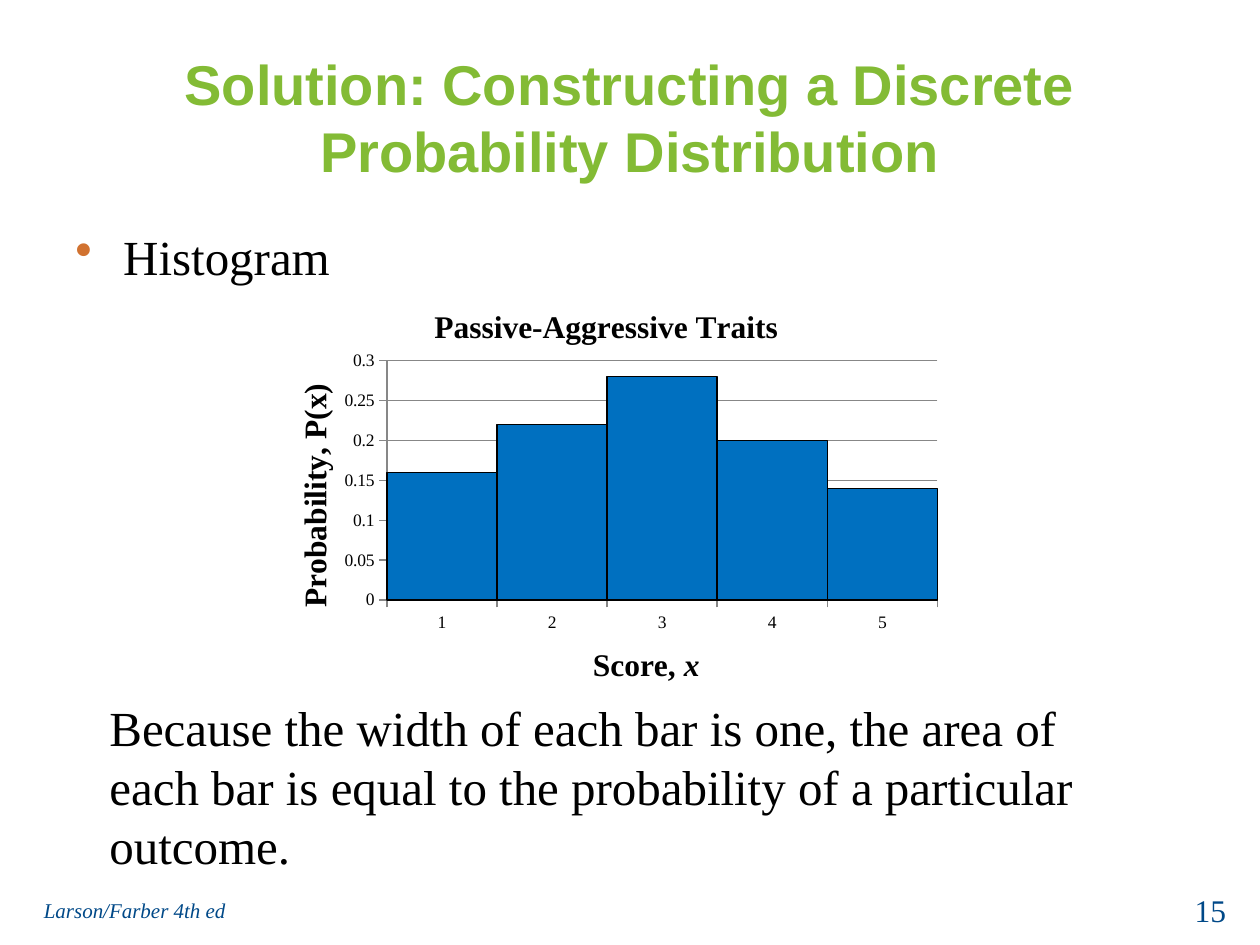
from lxml.etree import SubElement
from pptx import Presentation
from pptx.chart.data import CategoryChartData as Data
from pptx.dml.color import RGBColor
from pptx.enum.chart import XL_CHART_TYPE as Kind, XL_TICK_MARK as Tick
from pptx.enum.text import MSO_ANCHOR as Anchor, PP_ALIGN as Align
from pptx.oxml.ns import qn
from pptx.util import Inches, Pt

COLS, ROWS = 100, 75
SERIF, SANS = "Times New Roman", "Arial"
BLACK, GREEN, NAVY = "000000", "83BB35", "004988"
RUST, BLUE, GRAY = "D17230", "0070C0", "878787"


def rgb(code):
    return RGBColor.from_string(code)


def pin(node, index, **share):
    """Fix a chart part at shares of the chart's size."""
    for old in node.findall(qn("c:layout")):
        node.remove(old)
    layout = SubElement(node, qn("c:layout"))
    node.insert(index, layout)
    spot = SubElement(layout, qn("c:manualLayout"))
    if "w" in share:
        SubElement(spot, qn("c:layoutTarget")).set("val", "inner")
    for name in ("xMode", "yMode"):
        SubElement(spot, qn("c:" + name)).set("val", "edge")
    for name, value in share.items():
        SubElement(spot, qn("c:" + name)).set("val", str(value))


class Deck:
    """Places elements on a grid of COLS by ROWS cells."""

    def __init__(self):
        self.prs = Presentation()
        self.prs.slide_width, self.prs.slide_height = Inches(10), Inches(7.5)
        self.slide = self.prs.slides.add_slide(self.prs.slide_layouts[6])

    def area(self, x, y, w, h):
        wide, high = self.prs.slide_width / COLS, self.prs.slide_height / ROWS
        return [int(n) for n in (x * wide, y * high, w * wide, h * high)]

    def style(self, font, size, color=BLACK, face=SERIF, bold=False, italic=False):
        font.name, font.size = face, Pt(size)
        font.bold, font.italic = bold, italic
        font.color.rgb = rgb(color)

    def text(self, words, area, size, align=Align.LEFT, anchor=Anchor.TOP, **look):
        frame = self.slide.shapes.add_textbox(*self.area(*area)).text_frame
        frame.word_wrap, frame.vertical_anchor = True, anchor
        para = frame.paragraphs[0]
        para.text, para.alignment = words, align
        self.style(para.font, size, **look)
        return para

    def bullet(self, words, area, size):
        para = self.text(words, area, size)
        para.space_before = Pt(size * 0.2)
        props = para._p.get_or_add_pPr()
        props.set("marL", str(Inches(0.38)))
        props.set("indent", str(-Inches(0.38)))
        tint = SubElement(props, qn("a:buClr"))
        SubElement(tint, qn("a:srgbClr")).set("val", RUST)
        mark = SubElement(props, qn("a:buChar"))
        mark.set("char", "•")
        base = props.find(qn("a:defRPr"))
        if base is not None:
            props.append(base)

    def title(self, owner, runs, x, y):
        """Title a chart or axis; runs are (words, italic) pairs."""
        owner.has_title = True
        title = getattr(owner, "chart_title", None) or owner.axis_title
        para = title.text_frame.paragraphs[0]
        for words, italic in runs:
            run = para.add_run()
            run.text = words
            self.style(run.font, 18, bold=True, italic=italic)
        pin(title._element, 1, x=x, y=y)

    def histogram(self, values, area):
        data = Data()
        data.categories = [str(n + 1) for n in range(len(values))]
        data.add_series("Series 1", values)
        chart = self.slide.shapes.add_chart(
            Kind.COLUMN_CLUSTERED, *self.area(*area), data).chart
        chart.has_legend = False
        self.style(chart.font, 10)

        plot = chart.plots[0]
        plot.gap_width, plot.vary_by_categories = 0, False
        bars = plot.series[0].format
        bars.fill.solid()
        bars.fill.fore_color.rgb = rgb(BLUE)
        bars.line.color.rgb, bars.line.width = rgb(BLACK), Pt(0.75)

        cat, val = chart.category_axis, chart.value_axis
        val.minimum_scale, val.maximum_scale, val.major_unit = 0, 0.3, 0.05
        val.has_major_gridlines = True
        for axis in (cat, val):
            axis.major_tick_mark, axis.minor_tick_mark = Tick.OUTSIDE, Tick.NONE
        for part in (cat, val, val.major_gridlines):
            part.format.line.color.rgb = rgb(GRAY)
            part.format.line.width = Pt(0.75)

        self.title(chart, [("Passive-Aggressive Traits", False)], 0.25, 0.05)
        self.title(cat, [("Score, ", False), ("x", True)], 0.48, 0.85)
        self.title(val, [("Probability, P(x)", False)], 0.05, 0.23)
        room = chart._chartSpace.chart.plotArea
        pin(room, 0, x=0.19, y=0.19, w=0.79, h=0.56)


def main():
    deck = Deck()
    deck.text("Solution: Constructing a Discrete Probability Distribution",
              (5, 3, 90, 12.5), 32, Align.CENTER, Anchor.MIDDLE,
              color=GREEN, face=SANS, bold=True)
    deck.bullet("Histogram", (5, 17.5, 90, 6.3), 28)
    deck.histogram([0.16, 0.22, 0.28, 0.2, 0.14], (20.2, 22.2, 55.3, 33.9))
    deck.text("Because the width of each bar is one, the area of each bar is "
              "equal to the probability of a particular outcome.",
              (7.7, 54.9, 85.1, 15.2), 28)
    deck.text("15", (75, 70.2, 23.3, 4), 18, Align.RIGHT, color=NAVY)
    deck.text("Larson/Farber 4th ed", (2.5, 70.2, 31.7, 4), 12,
              anchor=Anchor.MIDDLE, color=NAVY, italic=True)
    deck.prs.save("out.pptx")


if __name__ == "__main__":
    main()
